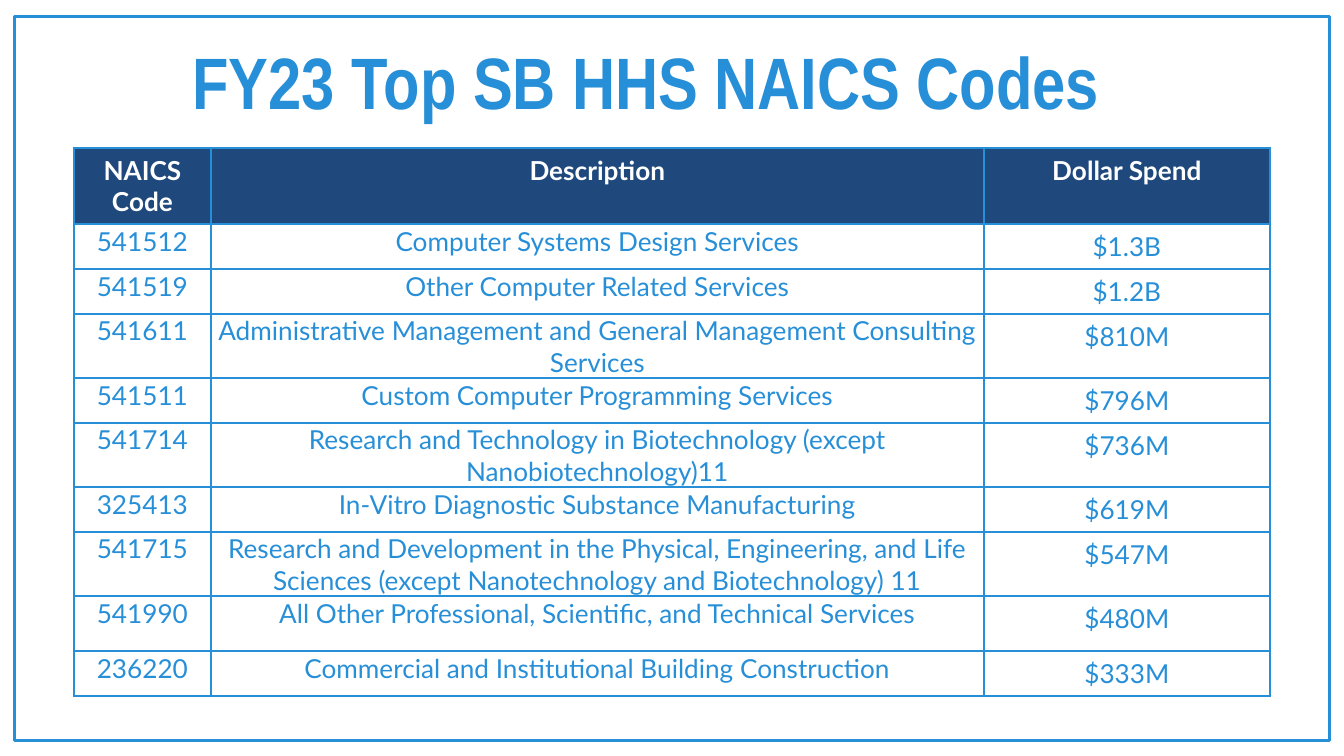
from pptx import Presentation
from pptx.dml.color import RGBColor
from pptx.enum.shapes import MSO_SHAPE
from pptx.enum.text import MSO_ANCHOR, PP_ALIGN
from pptx.oxml import parse_xml
from pptx.oxml.ns import nsdecls
from pptx.util import Inches, Pt

RECTANGLE = MSO_SHAPE.RECTANGLE
TOP = MSO_ANCHOR.TOP
CENTER = PP_ALIGN.CENTER

BLUE = RGBColor(0x27, 0x8F, 0xD8)
NAVY = RGBColor(0x1F, 0x49, 0x7D)
WHITE = RGBColor(0xFF, 0xFF, 0xFF)

TITLE_FONT = {"name": "Arial Narrow", "size": Pt(39), "bold": True}
HEADER_FONT = {"name": "Lato", "size": Pt(14), "bold": True}
BODY_FONT = {"name": "Lato", "size": Pt(14), "bold": False}
TIGHT_MARGINS = {
    "margin_left": Inches(0.01),
    "margin_right": Inches(0.01),
    "margin_top": Inches(0.01),
    "margin_bottom": Inches(0),
}

COLUMN_WIDTHS = [1.02, 5.75, 2.13]
HEADINGS = ["NAICS Code", "Description", "Dollar Spend"]
# Minimum row height, code, description, spend
CODES = [
    (0.25, "541512", "Computer Systems Design Services", "$1.3B"),
    (0.25, "541519", "Other Computer Related Services", "$1.2B"),
    (0.25, "541611", "Administrative Management and General Management "
     "Consulting Services", "$810M"),
    (0.25, "541511", "Custom Computer Programming Services", "$796M"),
    (0.41, "541714", "Research and Technology in Biotechnology (except "
     "Nanobiotechnology)11", "$736M"),
    (0.25, "325413", "In-Vitro Diagnostic Substance Manufacturing", "$619M"),
    (0.41, "541715", "Research and Development in the Physical, Engineering, "
     "and Life Sciences (except Nanotechnology and Biotechnology) 11", "$547M"),
    (0.41, "541990", "All Other Professional, Scientific, and Technical "
     "Services", "$480M"),
    (0.25, "236220", "Commercial and Institutional Building Construction",
     "$333M"),
]


def set_values(target, values):
    for name, value in values.items():
        setattr(target, name, value)


def write_text(frame, text, font, color):
    para = frame.paragraphs[0]
    para.alignment = CENTER
    span = para.add_run()
    span.text = text
    set_values(span.font, font)
    span.font.color.rgb = color


def add_frame(page):
    frame = page.shapes.add_shape(
        RECTANGLE, Inches(0.11), Inches(0.12), Inches(9.78), Inches(5.39))
    frame.shadow.inherit = False
    frame.fill.background()
    frame.line.color.rgb = BLUE
    frame.line.width = Pt(1.5)


def add_title(page, text):
    box = page.shapes.add_textbox(
        Inches(0.1), Inches(0.17), Inches(9.54), Inches(0.77))
    set_values(box.text_frame, {
        "word_wrap": True,
        "vertical_anchor": TOP,
        "margin_top": Inches(0.1),
        "margin_bottom": Inches(0.1),
    })
    write_text(box.text_frame, text, TITLE_FONT, BLUE)


def add_borders(cell):
    properties = cell._tc.get_or_add_tcPr()
    for index, side in enumerate(("lnL", "lnR", "lnT", "lnB")):
        border = parse_xml(
            f'<a:{side} {nsdecls("a")} w="{Pt(1)}"><a:solidFill>'
            f'<a:srgbClr val="{BLUE}"/></a:solidFill></a:{side}>')
        properties.insert(index, border)


def fill_cell(cell, text, font, color, fill=None, margins=None):
    if fill is None:
        cell.fill.background()
    else:
        cell.fill.solid()
        cell.fill.fore_color.rgb = fill
    set_values(cell, margins or {})
    write_text(cell.text_frame, text, font, color)
    add_borders(cell)


def add_code_table(page):
    heights = [0.37] + [row[0] for row in CODES]
    table = page.shapes.add_table(
        len(heights), len(COLUMN_WIDTHS), Inches(0.55), Inches(1.1),
        Inches(sum(COLUMN_WIDTHS)), Inches(sum(heights))).table
    set_values(table, {"first_row": False, "horz_banding": False})
    for column, width in zip(table.columns, COLUMN_WIDTHS):
        column.width = Inches(width)
    for row, height in zip(table.rows, heights):
        row.height = Inches(height)

    # Header row
    for column, heading in enumerate(HEADINGS):
        fill_cell(table.cell(0, column), heading, HEADER_FONT, WHITE, NAVY)

    # Code rows: only the spend column keeps the default margins
    for row, (_, *texts) in enumerate(CODES, start=1):
        for column, text in enumerate(texts):
            margins = TIGHT_MARGINS if column < 2 else None
            fill_cell(table.cell(row, column), text, BODY_FONT, BLUE,
                      margins=margins)


def main():
    # Widescreen page, 16 to 9
    deck = Presentation()
    deck.slide_width = Inches(10)
    deck.slide_height = Inches(10) * 9 // 16
    page = deck.slides.add_slide(deck.slide_layouts[6])
    add_frame(page)
    add_title(page, "FY23 Top SB HHS NAICS Codes ")
    add_code_table(page)
    deck.save("out.pptx")


if __name__ == "__main__":
    main()
